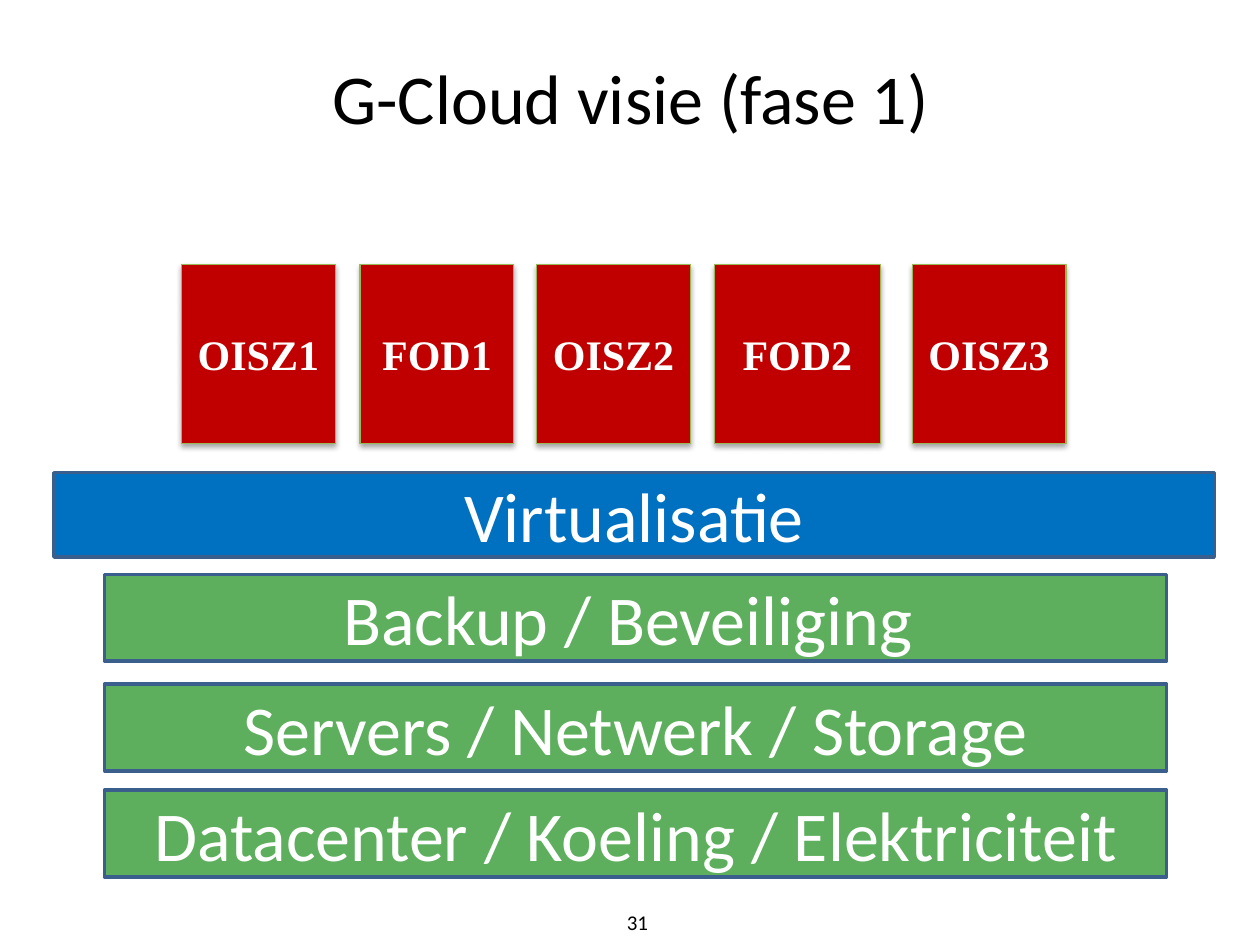
import lxml.etree
import pptx
import pptx.dml.color
import pptx.enum.shapes
import pptx.enum.text
import pptx.oxml.ns
import pptx.util

Cm = pptx.util.Cm
Pt = pptx.util.Pt

COLOURS = {
    "black": "000000",
    "white": "FFFFFF",
    "green": "5DAF5D",
    "blue": "0070C0",
    "red": "C00000",
    "layer_line": "3A5F8C",
    "tenant_line": "98B955",
}


class SlideBuilder:
    """Holds the style and the slide being filled."""

    body_font = "Calibri"
    tenant_font = "Times New Roman"

    def __init__(self, slide):
        self.slide = slide

    def colour(self, name):
        return pptx.dml.color.RGBColor.from_string(COLOURS[name])

    def set_text(self, shape, text, size, colour, font, bold=False):
        frame = shape.text_frame
        frame.word_wrap = True
        frame.vertical_anchor = pptx.enum.text.MSO_ANCHOR.MIDDLE
        para = frame.paragraphs[0]
        para.text = text
        para.alignment = pptx.enum.text.PP_ALIGN.CENTER
        para.font.name = font
        para.font.size = Pt(size)
        para.font.bold = bold
        para.font.color.rgb = self.colour(colour)

    def label(self, text, left, top, width, height, size):
        box = self.slide.shapes.add_textbox(Cm(left), Cm(top), Cm(width), Cm(height))
        self.set_text(box, text, size, "black", self.body_font)

    def rectangle(self, left, top, width, height, fill, line, line_width):
        shape = self.slide.shapes.add_shape(
            pptx.enum.shapes.MSO_SHAPE.RECTANGLE,
            Cm(left), Cm(top), Cm(width), Cm(height))
        shape.shadow.inherit = False
        shape.fill.solid()
        shape.fill.fore_color.rgb = self.colour(fill)
        shape.line.color.rgb = self.colour(line)
        shape.line.width = Pt(line_width)
        return shape

    def layer(self, text, left, top, width, height, fill):
        shape = self.rectangle(left, top, width, height, fill, "layer_line", 2)
        self.set_text(shape, text, 40, "white", self.body_font)

    def tenant(self, text, left, width):
        shape = self.rectangle(left, 5.33, width, 3.61, "red", "tenant_line", 0.75)
        self.add_shadow(shape)
        self.set_text(shape, text, 24, "white", self.tenant_font, bold=True)

    def add_shadow(self, shape):
        qn = pptx.oxml.ns.qn
        effects = shape.element.spPr.find(qn("a:effectLst"))
        shadow = lxml.etree.SubElement(
            effects, qn("a:outerShdw"), blurRad=str(int(Pt(3.1))),
            dist=str(int(Pt(1.8))), dir="5400000", rotWithShape="0")
        tint = lxml.etree.SubElement(shadow, qn("a:srgbClr"), val=COLOURS["black"])
        lxml.etree.SubElement(tint, qn("a:alpha"), val="35000")


def main():
    deck = pptx.Presentation()
    deck.slide_width = Cm(25.4)
    deck.slide_height = Cm(19.05)
    builder = SlideBuilder(deck.slides.add_slide(deck.slide_layouts[6]))

    # Title and page number
    builder.label("G-Cloud visie (fase 1)", 0.71, 0.36, 24, 3.18, 40)
    builder.label("31", 11.81, 18.14, 2.08, 0.91, 12)

    # Shared infrastructure layers, from the bottom up
    for text, top in (
        ("Datacenter / Koeling / Elektriciteit", 15.93),
        ("Servers / Netwerk / Storage", 13.79),
        ("Backup / Beveiliging ", 11.58),
    ):
        builder.layer(text, 2.11, top, 21.41, 1.75, "green")
    builder.layer("Virtualisatie", 1.09, 9.53, 23.39, 1.7, "blue")

    # Institutions on top of the platform
    for text, left, width in (
        ("OISZ1", 3.66, 3.1),
        ("FOD1", 7.26, 3.1),
        ("OISZ2", 10.82, 3.1),
        ("FOD2", 14.4, 3.35),
        ("OISZ3", 18.39, 3.1),
    ):
        builder.tenant(text, left, width)

    deck.save("out.pptx")


if __name__ == "__main__":
    main()
